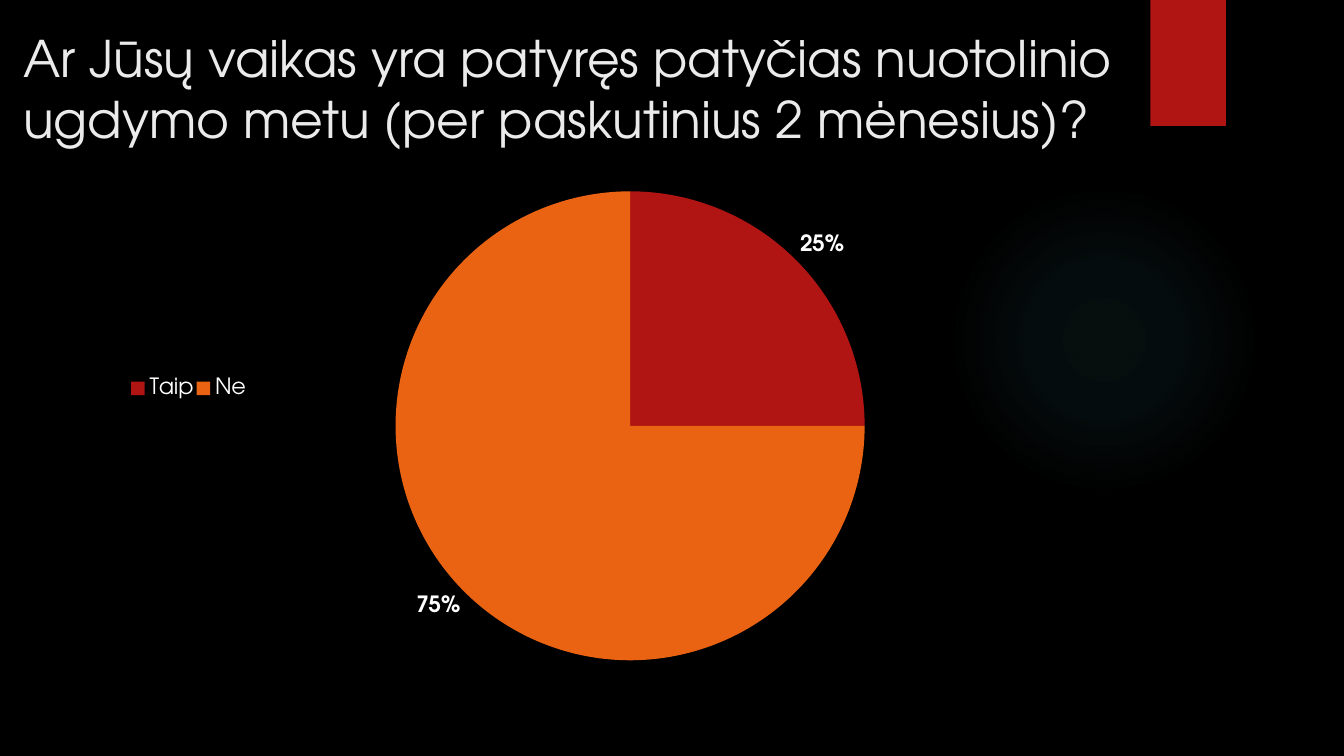
from dataclasses import dataclass

from lxml.etree import SubElement
from pptx import Presentation
from pptx.chart.data import CategoryChartData
from pptx.dml.color import RGBColor
from pptx.enum.chart import XL_CHART_TYPE, XL_LABEL_POSITION, XL_LEGEND_POSITION
from pptx.enum.shapes import MSO_SHAPE
from pptx.enum.text import MSO_ANCHOR, MSO_AUTO_SIZE, PP_ALIGN
from pptx.oxml import parse_xml
from pptx.oxml.ns import nsdecls, qn
from pptx.util import Inches, Pt


@dataclass(frozen=True)
class Theme:
    font: str = "TeX Gyre Adventor"
    background: str = "000000"
    title: str = "EBEBEB"
    text: str = "FFFFFF"
    glow: str = "50B9C1"
    red: str = "B01513"
    orange: str = "EA6312"
    title_size: int = 36
    chart_size: int = 18
    label_size: int = 16


def apply(target, formats):
    for name, value in formats.items():
        setattr(target, name, value)


class SlideBuilder:
    def __init__(self, slide, theme):
        self.slide = slide
        self.theme = theme

    def background(self):
        fill = self.slide.background.fill
        fill.solid()
        fill.fore_color.rgb = RGBColor.from_string(self.theme.background)

    def style_font(self, font, size, color, bold=False):
        apply(font, {"name": self.theme.font, "size": Pt(size), "bold": bold})
        font.color.rgb = RGBColor.from_string(color)

    def shape(self, kind, box, color):
        shape = self.slide.shapes.add_shape(kind, *map(Inches, box))
        shape.shadow.inherit = False
        shape.fill.solid()
        shape.fill.fore_color.rgb = RGBColor.from_string(color)
        shape.line.fill.background()
        return shape

    def glow(self, box, stops):
        glow = self.shape(MSO_SHAPE.OVAL, box, self.theme.glow)
        stop_xml = "".join(
            f'<a:gs pos="{position * 1000}"><a:srgbClr val="{self.theme.glow}">'
            f'<a:alpha val="{opacity * 1000}"/></a:srgbClr></a:gs>'
            for position, opacity in stops)
        gradient = parse_xml(
            f'<a:gradFill {nsdecls("a")} rotWithShape="1"><a:gsLst>{stop_xml}</a:gsLst>'
            '<a:path path="circle"><a:fillToRect l="50000" t="50000" r="50000" b="50000"/>'
            '</a:path></a:gradFill>')
        properties = glow._element.spPr
        properties.replace(properties.find(qn("a:solidFill")), gradient)

    def ribbon(self, box):
        ribbon = self.shape(MSO_SHAPE.RECTANGLE, box, self.theme.red)
        effects = ribbon._element.spPr.find(qn("a:effectLst"))
        effects.append(parse_xml(
            f'<a:outerShdw {nsdecls("a")} blurRad="{Pt(3)}" dist="{Pt(2)}" dir="5400000">'
            '<a:srgbClr val="000000"><a:alpha val="45000"/></a:srgbClr></a:outerShdw>'))

    def title(self, box, wording):
        title = self.slide.shapes.title
        apply(title, dict(zip(("left", "top", "width", "height"), map(Inches, box))))
        frame = title.text_frame
        frame.text = wording
        apply(frame, {"word_wrap": True, "auto_size": MSO_AUTO_SIZE.NONE,
                      "vertical_anchor": MSO_ANCHOR.TOP})
        paragraph = frame.paragraphs[0]
        paragraph.alignment = PP_ALIGN.LEFT
        self.style_font(paragraph.runs[0].font, self.theme.title_size, self.theme.title)

    def place(self, layout, settings):
        manual = SubElement(layout, qn("c:manualLayout"))
        for tag, value in settings.items():
            SubElement(manual, qn(f"c:{tag}")).set("val", str(value))

    def pie(self, box, answers, colors, pie_area, legend_area):
        data = CategoryChartData()
        data.categories = list(answers)
        data.add_series("Series 1", list(answers.values()))
        chart = self.slide.shapes.add_chart(
            XL_CHART_TYPE.PIE, *map(Inches, box), data).chart
        apply(chart, {"has_title": False, "has_legend": True})
        self.style_font(chart.font, self.theme.chart_size, self.theme.text)

        # Slices and percentages
        plot = chart.plots[0]
        apply(plot, {"vary_by_categories": True, "has_data_labels": True})
        for index, color in enumerate(colors):
            fill = plot.series[0].points[index].format.fill
            fill.solid()
            fill.fore_color.rgb = RGBColor.from_string(color)
        labels = plot.data_labels
        apply(labels, {"show_percentage": True, "show_value": False,
                       "number_format": "0%", "number_format_is_linked": False,
                       "position": XL_LABEL_POSITION.OUTSIDE_END})
        self.style_font(labels.font, self.theme.label_size, self.theme.text, bold=True)

        # Legend left of the pie
        legend = chart.legend
        apply(legend, {"position": XL_LEGEND_POSITION.RIGHT, "include_in_layout": False})
        self.style_font(legend.font, self.theme.label_size, self.theme.text)

        # Positions as fractions of the chart
        modes = {"xMode": "edge", "yMode": "edge"}
        plot_area = chart._chartSpace.chart.plotArea
        for layout in plot_area.findall(qn("c:layout")):
            plot_area.remove(layout)
        plot_layout = plot_area.makeelement(qn("c:layout"))
        plot_area.insert(0, plot_layout)
        self.place(plot_layout, {"layoutTarget": "inner", **modes, **pie_area})
        legend_element = legend._element
        for layout in legend_element.findall(qn("c:layout")):
            legend_element.remove(layout)
        legend_layout = legend_element.makeelement(qn("c:layout"))
        legend_element.find(qn("c:legendPos")).addnext(legend_layout)
        self.place(legend_layout, {**modes, **legend_area})


def main():
    theme = Theme()
    deck = Presentation()
    apply(deck, {"slide_width": Inches(13.33), "slide_height": Inches(7.5)})
    builder = SlideBuilder(deck.slides.add_slide(deck.slide_layouts[5]), theme)

    # Backdrop
    builder.background()
    builder.glow((9.41, 1.83, 3.08, 3.08), [(0, 7), (36, 6), (69, 0)])
    builder.ribbon((11.41, 0, 0.75, 1.25))

    # Question
    builder.title((0.13, 0.22, 11.22, 1.53),
                  "Ar Jūsų vaikas yra patyręs patyčias nuotolinio ugdymo metu "
                  "(per paskutinius 2 mėnesius)?")

    # Answers
    builder.pie((0.67, 1.75, 12, 4.95), {"Taip": 25, "Ne": 75},
                (theme.red, theme.orange),
                pie_area={"x": 0.27, "y": 0.03, "w": 0.39, "h": 0.94},
                legend_area={"x": 0.05, "y": 0.39, "w": 0.1, "h": 0.07})

    deck.save("out.pptx")


if __name__ == "__main__":
    main()
